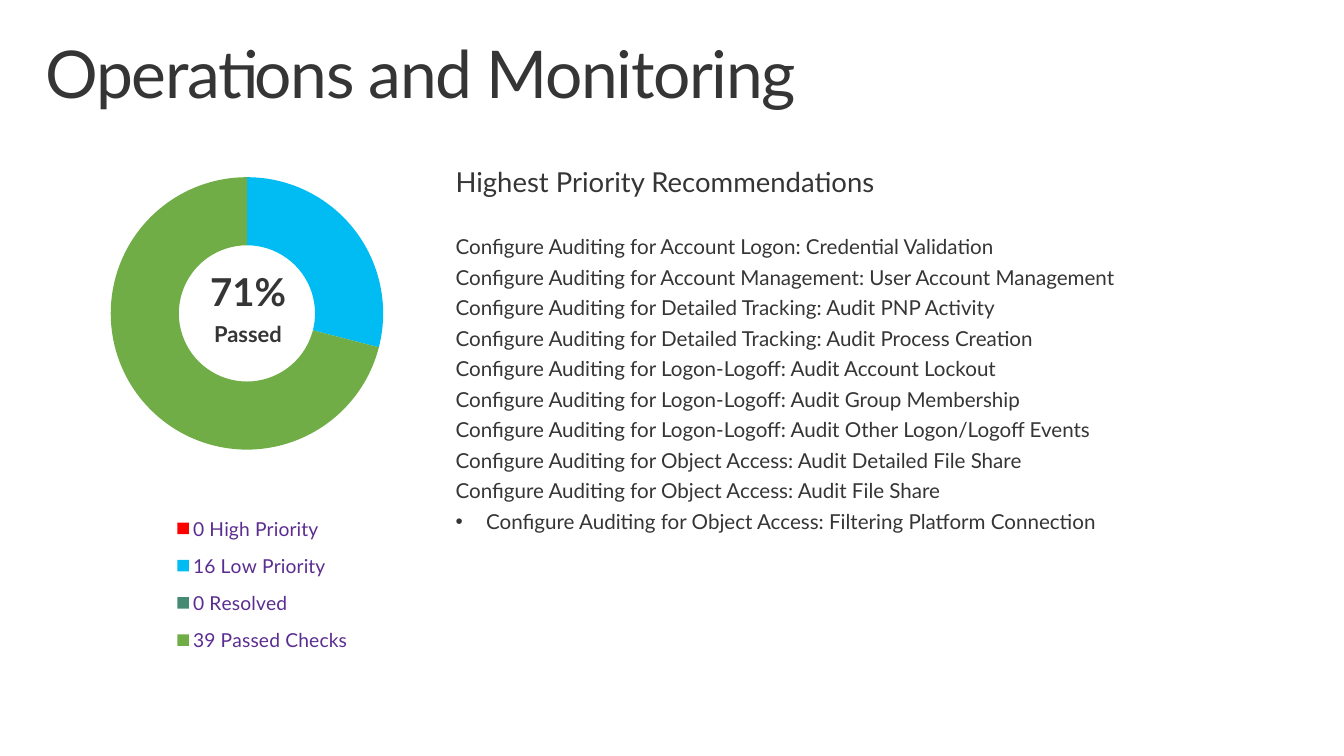
"""Build the Operations and Monitoring slide."""
import pptx
import pptx.chart.data
import pptx.dml.color
import pptx.enum.chart
import pptx.enum.text
import pptx.oxml
import pptx.oxml.ns
import pptx.util

Inches = pptx.util.Inches
Pt = pptx.util.Pt
RGB = pptx.dml.color.RGBColor
DARK = RGB(0x35, 0x35, 0x35)
PURPLE = RGB(0x5B, 0x2D, 0x91)
RED = RGB(0xFF, 0x00, 0x00)
NAVY = RGB(0x00, 0x1D, 0x49)
BLUE = RGB(0x00, 0xBC, 0xF2)
PLUM = RGB(0xA3, 0x00, 0x8F)
TEAL = RGB(0x45, 0x8B, 0x74)
GREY = RGB(0xD1, 0xD1, 0xD1)
GREEN = RGB(0x70, 0xAD, 0x47)
FONT = "Lato"
SPACE = "http://schemas.openxmlformats.org/drawingml/2006/chart"

SLICES = [
    ("0 High Priority ", 0, RED),
    ("", None, NAVY),
    ("16 Low Priority", 29, BLUE),
    ("", None, PLUM),
    ("0 Resolved", 0, TEAL),
    ("", None, GREY),
    ("39 Passed Checks", 71, GREEN),
]
AUDITS = [
    "Account Logon: Credential Validation",
    "Account Management: User Account Management",
    "Detailed Tracking: Audit PNP Activity",
    "Detailed Tracking: Audit Process Creation",
    "Logon-Logoff: Audit Account Lockout",
    "Logon-Logoff: Audit Group Membership",
    "Logon-Logoff: Audit Other Logon/Logoff Events",
    "Object Access: Audit Detailed File Share",
    "Object Access: Audit File Share",
    "Object Access: Filtering Platform Connection",
]


def style(font, size, color=DARK, bold=False):
    font.name = FONT
    font.size = Pt(size)
    font.color.rgb = color
    font.bold = bold


def write(box, lines, align):
    frame = box.text_frame
    frame.word_wrap = True
    frame.margin_left = frame.margin_right = Inches(0.2)
    frame.margin_top = frame.margin_bottom = Inches(0.16)
    frame.text = "\n".join(text for text, size, bold, after in lines)
    for para, (text, size, bold, after) in zip(frame.paragraphs, lines):
        para.alignment = align
        para.line_spacing = 0.9
        para.space_after = Pt(after)
        style(para.runs[0].font, size, DARK, bold)
    return frame.paragraphs


deck = pptx.Presentation()
deck.slide_width = Inches(13.6)
deck.slide_height = Inches(7.65)
slide = deck.slides.add_slide(deck.slide_layouts[5])

title = slide.shapes.title
title.left, title.top = Inches(0.3), Inches(0.32)
title.width, title.height = Inches(13), Inches(1)
frame = title.text_frame
frame.text = "Operations and Monitoring"
frame.auto_size = pptx.enum.text.MSO_AUTO_SIZE.NONE
frame.vertical_anchor = pptx.enum.text.MSO_ANCHOR.TOP
frame.margin_left = frame.margin_right = Inches(0.16)
frame.margin_top = frame.margin_bottom = Inches(0.1)
para = frame.paragraphs[0]
para.alignment = pptx.enum.text.PP_ALIGN.LEFT
para.line_spacing = 0.9
style(para.runs[0].font, 48)
para.runs[0].font._element.set("spc", "-100")

data = pptx.chart.data.CategoryChartData()
data.categories = [name for name, value, color in SLICES]
data.add_series("Series 1", [value for name, value, color in SLICES])
chart = slide.shapes.add_chart(
    pptx.enum.chart.XL_CHART_TYPE.DOUGHNUT,
    Inches(0), Inches(1.1), Inches(4.83), Inches(5.87), data).chart
chart.has_title = False
style(chart.font, 10)
plot = chart.plots[0]
plot.vary_by_categories = True
plot._element.find(pptx.oxml.ns.qn("c:holeSize")).set("val", "68")
for spot, (name, value, color) in enumerate(SLICES):
    fill = plot.series[0].points[spot].format.fill
    fill.solid()
    fill.fore_color.rgb = color

chart.has_legend = True
legend = chart.legend
legend.position = pptx.enum.chart.XL_LEGEND_POSITION.BOTTOM
legend.include_in_layout = False
style(legend.font, 14, PURPLE)
after = legend._element.find(pptx.oxml.ns.qn("c:legendPos"))
for spot, (name, value, color) in enumerate(SLICES):
    if not name:
        entry = pptx.oxml.parse_xml(
            f'<c:legendEntry xmlns:c="{SPACE}"><c:idx val="{spot}"/>'
            '<c:delete val="1"/></c:legendEntry>')
        after.addnext(entry)
        after = entry

area = chart._chartSpace.chart.plotArea
places = [
    (area, '<c:layoutTarget val="inner"/>', (0.232, 0.074, 0.571, 0.558)),
    (legend._element, "", (0.35, 0.68, 0.4, 0.28)),
]
for owner, target, sides in places:
    modes = '<c:xMode val="edge"/><c:yMode val="edge"/>'
    sizes = "".join(f'<c:{key} val="{side}"/>' for key, side in zip("xywh", sides))
    layout = pptx.oxml.parse_xml(
        f'<c:layout xmlns:c="{SPACE}"><c:manualLayout>{target}{modes}{sizes}'
        '</c:manualLayout></c:layout>')
    old = owner.find(pptx.oxml.ns.qn("c:layout"))
    if old is not None:
        owner.remove(old)
    if owner is area:
        area.insert(0, layout)
    else:
        after.addnext(layout)

score = slide.shapes.add_textbox(Inches(1.8), Inches(2.61), Inches(1.42), Inches(3.19))
write(score, [("71%", 28, True, 6), ("Passed", 16, True, 6)],
      pptx.enum.text.PP_ALIGN.CENTER)

advice = slide.shapes.add_textbox(Inches(4.41), Inches(1.55), Inches(8.41), Inches(1.25))
lines = [("Highest Priority Recommendations", 20, False, 28)]
lines += [(f"Configure Auditing for {audit}", 15, False, 6) for audit in AUDITS]
paras = write(advice, lines, pptx.enum.text.PP_ALIGN.LEFT)
props = paras[-1]._p.get_or_add_pPr()
props.set("marL", str(Inches(0.31)))
props.set("indent", str(-Inches(0.31)))
for tag, key, value in [("a:buFont", "typeface", "Arial"), ("a:buChar", "char", "•")]:
    mark = pptx.oxml.xmlchemy.OxmlElement(tag)
    mark.set(key, value)
    props.append(mark)

deck.save("out.pptx")
